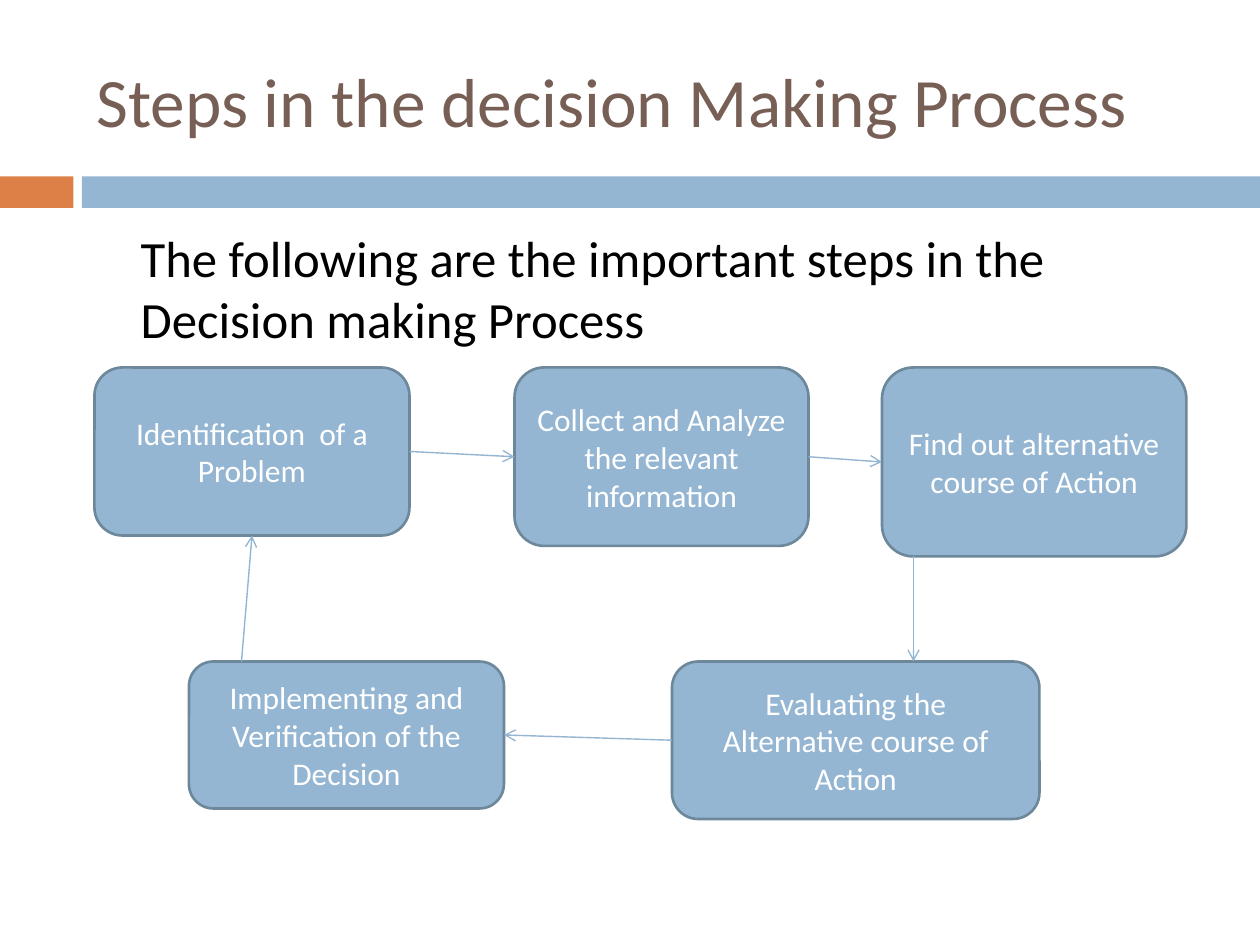
from dataclasses import dataclass

from lxml.etree import SubElement
from pptx import Presentation
from pptx.dml.color import RGBColor
from pptx.enum.shapes import MSO_CONNECTOR, MSO_SHAPE
from pptx.enum.text import MSO_ANCHOR, PP_ALIGN
from pptx.oxml.ns import qn
from pptx.util import Emu, Pt

EMU_PER_PX = 7620
TOP, LEFT, BOTTOM, RIGHT = range(4)


@dataclass(frozen=True)
class Theme:
    font: str = "Calibri"
    blue: str = "94B6D2"
    blue_edge: str = "6D879B"
    orange: str = "DD8047"
    brown: str = "775F55"
    black: str = "000000"
    white: str = "FFFFFF"
    title_size: float = 39.6
    intro_size: float = 29
    step_size: float = 18
    edge_width: float = 1.5
    arrow_width: float = 0.79


THEME = Theme()


def px(length):
    return Emu(length * EMU_PER_PX)


def color(code):
    return RGBColor.from_string(code)


def write(frame, wording, size, ink, align, anchor):
    frame.word_wrap = True
    frame.vertical_anchor = anchor
    paragraph = frame.paragraphs[0]
    paragraph.text = wording
    paragraph.alignment = align
    paragraph.font.name = THEME.font
    paragraph.font.size = Pt(size)
    paragraph.font.color.rgb = color(ink)
    return paragraph


def add_text(slide, box, wording, size, ink, anchor, inset=12):
    frame = slide.shapes.add_textbox(*map(px, box)).text_frame
    frame.margin_left = px(inset)
    return write(frame, wording, size, ink, PP_ALIGN.LEFT, anchor)


def add_block(slide, preset, box, fill):
    block = slide.shapes.add_shape(preset, *map(px, box))
    block.shadow.inherit = False
    block.fill.solid()
    block.fill.fore_color.rgb = color(fill)
    block.line.fill.background()
    return block


def add_step(slide, box, wording):
    step = add_block(slide, MSO_SHAPE.ROUNDED_RECTANGLE, box, THEME.blue)
    step.line.color.rgb = color(THEME.blue_edge)
    step.line.width = Pt(THEME.edge_width)
    write(step.text_frame, wording, THEME.step_size, THEME.white,
          PP_ALIGN.CENTER, MSO_ANCHOR.MIDDLE)
    return step


def add_arrow(slide, start=(0, 0), end=(0, 0), source=None, target=None):
    arrow = slide.shapes.add_connector(
        MSO_CONNECTOR.STRAIGHT, *map(px, start + end))
    if source:
        arrow.begin_connect(*source)
    if target:
        arrow.end_connect(*target)
    arrow.line.color.rgb = color(THEME.blue)
    arrow.line.width = Pt(THEME.arrow_width)
    SubElement(arrow.line._get_or_add_ln(), qn("a:tailEnd"), type="arrow")
    SubElement(arrow._element.spPr, qn("a:effectLst"))


def main():
    presentation = Presentation()
    presentation.slide_width = px(1200)
    presentation.slide_height = px(900)
    slide = presentation.slides.add_slide(presentation.slide_layouts[6])

    add_block(slide, MSO_SHAPE.RECTANGLE, (0, 168, 70, 30), THEME.orange)
    add_block(slide, MSO_SHAPE.RECTANGLE, (78, 168, 1122, 30), THEME.blue)
    add_text(slide, (80, 30, 1070, 130), "Steps in the decision Making Process",
             THEME.title_size, THEME.brown, MSO_ANCHOR.MIDDLE)
    intro = add_text(
        slide, (80, 210, 1070, 590),
        "The following are the important steps in the Decision making Process",
        THEME.intro_size, THEME.black, MSO_ANCHOR.TOP, inset=54)
    intro.space_before = Pt(7)

    upper, lower = 350, 630
    identify = add_step(slide, (90, upper, 300, 160),
                        "Identification  of a Problem")
    collect = add_step(slide, (490, upper, 280, 170),
                       "Collect and Analyze the relevant information")
    alternatives = add_step(slide, (840, upper, 290, 180),
                            "Find out alternative course of Action")
    implement = add_step(slide, (180, lower, 300, 140),
                         "Implementing and Verification of the Decision")
    evaluate = add_step(slide, (640, lower, 350, 150),
                        "Evaluating the Alternative course of Action")

    add_arrow(slide, source=(identify, RIGHT), target=(collect, LEFT))
    add_arrow(slide, source=(collect, RIGHT), target=(alternatives, LEFT))
    add_arrow(slide, start=(870, 530), end=(870, lower))
    add_arrow(slide, source=(evaluate, LEFT), target=(implement, RIGHT))
    add_arrow(slide, start=(230, lower), target=(identify, BOTTOM))

    presentation.save("out.pptx")


if __name__ == "__main__":
    main()
